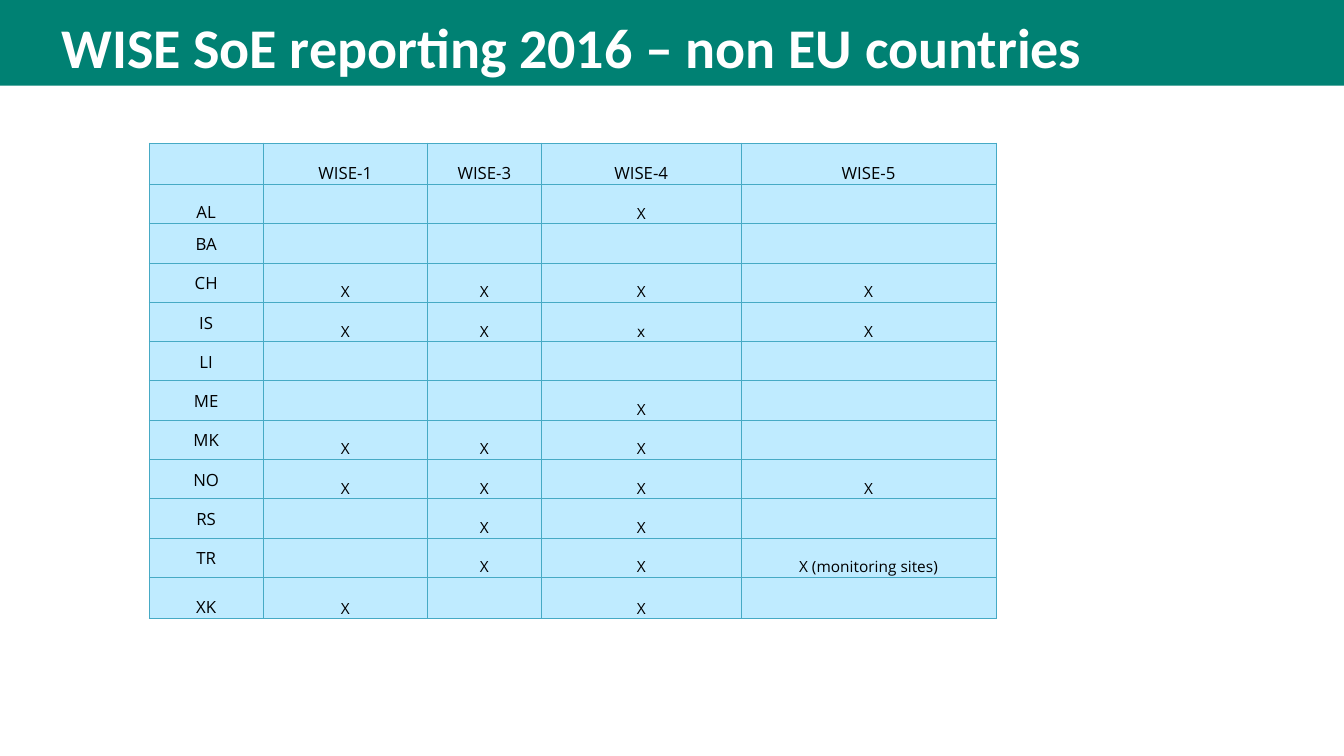
from lxml import etree
from pptx import Presentation
from pptx.dml.color import RGBColor
from pptx.enum.shapes import MSO_SHAPE as Shape
from pptx.enum.text import MSO_ANCHOR as Anchor, PP_ALIGN as Align
from pptx.oxml.ns import qn
from pptx.util import Inches, Pt

TEAL = RGBColor(0x00, 0x81, 0x73)
WHITE = RGBColor(0xFF, 0xFF, 0xFF)
BLACK = RGBColor(0x00, 0x00, 0x00)
PALE_BLUE = RGBColor(0xBF, 0xEB, 0xFF)
BORDER_BLUE = RGBColor(0x46, 0xAA, 0xC5)

SLIDE_WIDTH, SLIDE_HEIGHT = 13.33, 7.5
COLUMN_WIDTHS = [1.13, 1.63, 1.13, 1.98, 2.53]
ROW_HEIGHTS = [0.41] + [0.39] * 10 + [0.41]
REPORTING = [
    ["", "WISE-1", "WISE-3", "WISE-4", "WISE-5"],
    ["AL", "", "", "X", ""],
    ["BA", "", "", "", ""],
    ["CH", "X", "X", "X", "X"],
    ["IS", "X", "X", "x", "X"],
    ["LI", "", "", "", ""],
    ["ME", "", "", "X", ""],
    ["MK", "X", "X", "X", ""],
    ["NO", "X", "X", "X", "X"],
    ["RS", "", "X", "X", ""],
    ["TR", "", "X", "X", "X (monitoring sites)"],
    ["XK", "X", "", "X", ""],
]


def format_run(run, font_name, size, color, bold=False):
    run.font.name = font_name
    run.font.size = Pt(size)
    run.font.color.rgb = color
    run.font.bold = bold


def add_header(slide, left, top, width, height):
    # Band, sent behind the title
    band = slide.shapes.add_shape(Shape.RECTANGLE, Inches(left), Inches(top),
                                  Inches(width), Inches(height))
    band.shadow.inherit = False
    band.fill.solid()
    band.fill.fore_color.rgb = TEAL
    band.line.fill.background()
    slide.shapes._spTree.insert(2, band._element)

    # Title
    title = slide.shapes.title
    title.left, title.top = Inches(left + 0.51), Inches(top + 0.04)
    title.width, title.height = Inches(width - 1.03), Inches(height - 0.11)
    frame = title.text_frame
    frame.text = "WISE SoE reporting 2016 – non EU countries"
    frame.word_wrap = True
    frame.vertical_anchor = Anchor.TOP
    frame.margin_top = Inches(0.08)
    frame.margin_bottom = 0
    heading = frame.paragraphs[0]
    heading.alignment = Align.LEFT
    heading.line_spacing = 1.0
    format_run(heading.runs[0], "Calibri", 40, WHITE, bold=True)


def add_borders(cell):
    properties = cell._tc.get_or_add_tcPr()
    for position, side in enumerate(("lnL", "lnR", "lnT", "lnB")):
        line = etree.Element(qn(f"a:{side}"), w=str(Pt(0.75)))
        fill = etree.SubElement(line, qn("a:solidFill"))
        etree.SubElement(fill, qn("a:srgbClr"), val=str(BORDER_BLUE))
        properties.insert(position, line)


def fill_cell(cell, text, size, anchor):
    cell.fill.solid()
    cell.fill.fore_color.rgb = PALE_BLUE
    add_borders(cell)
    cell.margin_left = cell.margin_right = cell.margin_top = Inches(0.01)
    cell.margin_bottom = 0
    cell.vertical_anchor = anchor
    if text:
        paragraph = cell.text_frame.paragraphs[0]
        paragraph.text = text
        paragraph.alignment = Align.CENTER
        format_run(paragraph.runs[0], "Open Sans", size, BLACK)


def add_reporting_table(slide, left, top, width, height):
    table = slide.shapes.add_table(len(REPORTING), len(COLUMN_WIDTHS), Inches(left),
                                   Inches(top), Inches(width), Inches(height)).table
    for column, column_width in zip(table.columns, COLUMN_WIDTHS):
        column.width = Inches(column_width)
    for row, row_height in zip(table.rows, ROW_HEIGHTS):
        row.height = Inches(row_height)

    # Headings and country codes are larger than the marks
    last_row = len(REPORTING) - 1
    for r, entries in enumerate(REPORTING):
        for c, text in enumerate(entries):
            size = 12 if r == 0 or c == 0 else 11
            centred = c == 0 and 1 < r < last_row
            fill_cell(table.cell(r, c), text, size,
                      Anchor.MIDDLE if centred else Anchor.BOTTOM)


def main():
    deck = Presentation()
    deck.slide_width, deck.slide_height = Inches(SLIDE_WIDTH), Inches(SLIDE_HEIGHT)
    slide = deck.slides.add_slide(deck.slide_layouts[5])
    add_header(slide, 0, 0, SLIDE_WIDTH, 0.85)
    add_reporting_table(slide, 1.48, 1.42, sum(COLUMN_WIDTHS), sum(ROW_HEIGHTS))
    deck.save("out.pptx")


if __name__ == "__main__":
    main()
